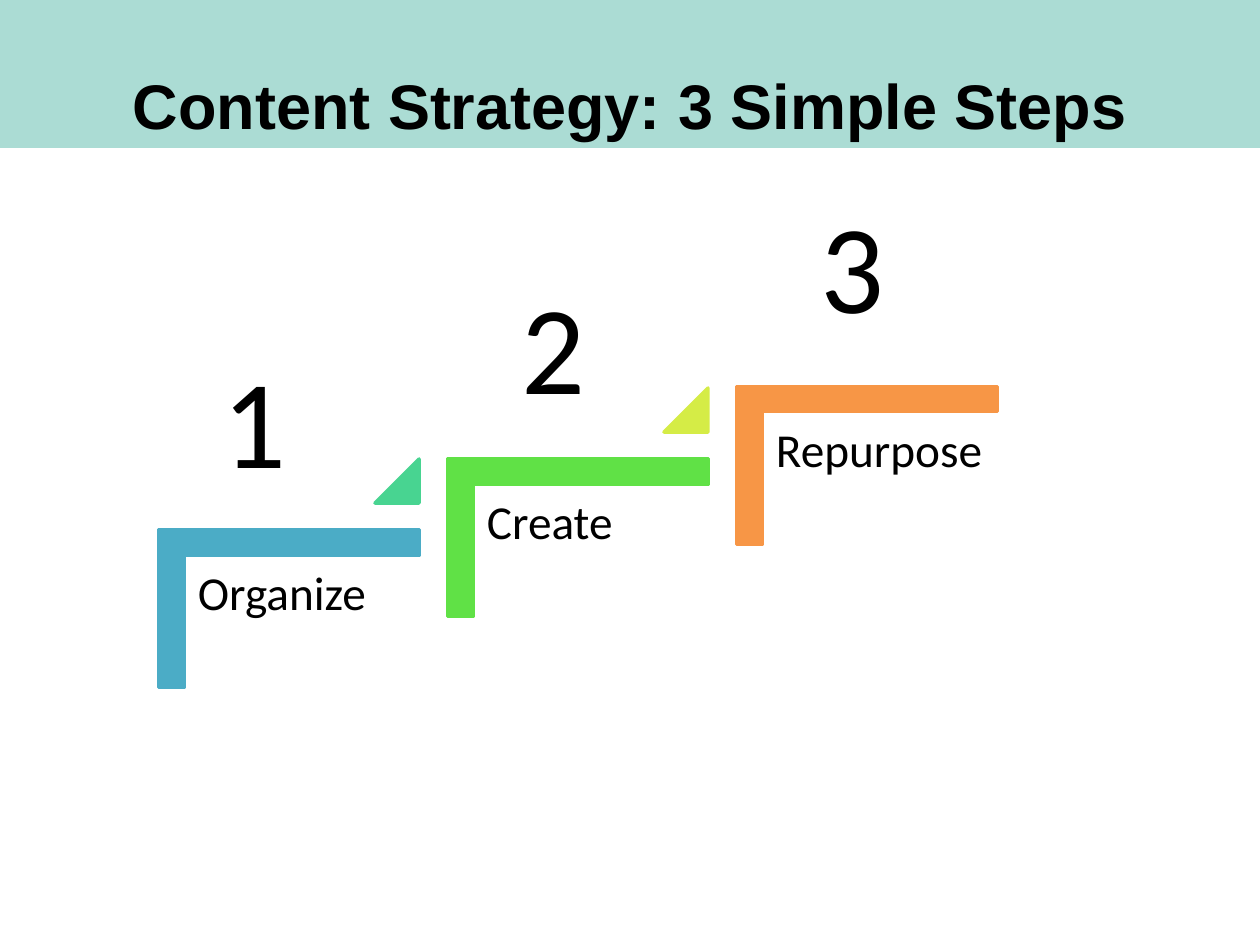
from dataclasses import dataclass

from pptx import Presentation
from pptx import util as u
from pptx.dml.color import RGBColor
from pptx.enum import shapes, text

SCALE = 914400 / 126  # EMU in one px


@dataclass(frozen=True)
class Theme:
    band: str = "ABDCD4"
    ink: str = "000000"
    stairs: tuple = ("4BACC6", "60E146", "F79646")
    marks: tuple = ("48D491", "D5EC46")
    head: str = "Arial"
    body: str = "Calibri"
    title: int = 36
    label: int = 27
    digit: int = 72
    edge: int = 2


THEME = Theme()
STEPS = ("Organize", "Create", "Repurpose")
DIGIT_TOPS = (336, 262, 181)


def px(n):
    return u.Emu(round(n * SCALE))


def add_run(para, words, font, size, bold=False):
    run = para.add_run()
    run.text = words
    run.font.name = font
    run.font.size = u.Pt(size)
    run.font.bold = bold
    run.font.color.rgb = RGBColor.from_string(THEME.ink)


def add_form(parent, kind, box, color, edge=0, adj=(), turn=0):
    form = parent.add_shape(kind, *map(px, box))
    form.shadow.inherit = False
    form.rotation = turn
    tint = RGBColor.from_string(color)
    form.fill.solid()
    form.fill.fore_color.rgb = tint
    if edge:
        form.line.color.rgb = tint
        form.line.width = u.Pt(edge)
    else:
        form.line.fill.background()
    for i, part in enumerate(adj):
        form.adjustments[i] = part
    return form


def add_text(parent, box, words, size, inset=None, space=None):
    frame = parent.add_textbox(*map(px, box)).text_frame
    frame.word_wrap = True
    if inset is not None:
        frame.margin_left = frame.margin_right = px(inset)
        frame.margin_top = frame.margin_bottom = px(inset)
    para = frame.paragraphs[0]
    para.line_spacing = space
    add_run(para, words, THEME.body, size)


def add_title(parent, words):
    band = add_form(parent, shapes.MSO_SHAPE.RECTANGLE,
                    (0, 0, 1260, 148), THEME.band)
    frame = band.text_frame
    frame.word_wrap = True
    frame.vertical_anchor = text.MSO_ANCHOR.BOTTOM
    para = frame.paragraphs[0]
    para.alignment = text.PP_ALIGN.CENTER
    add_run(para, words, THEME.head, THEME.title, bold=True)


def add_step(parent, i, label):
    # Each step sits one tread right of the last and one riser above it
    left, rise = 289 * i, 143 * i // 2
    add_form(parent, shapes.MSO_SHAPE.CORNER,
             (210 + left, 478 - rise, 158, 261), THEME.stairs[i],
             THEME.edge, (0.16, 0.16), 90)
    add_text(parent, (184 + left, 556 - rise, 236, 207), label,
             THEME.label, inset=14, space=0.9)
    if i < len(THEME.marks):
        add_form(parent, shapes.MSO_SHAPE.ISOSCELES_TRIANGLE,
                 (375 + left, 459 - rise, 44, 44), THEME.marks[i],
                 THEME.edge, (1,))


def main():
    deck = Presentation()
    deck.slide_width, deck.slide_height = px(1260), px(945)
    slide = deck.slides.add_slide(deck.slide_layouts[6])

    # Title band
    add_title(slide.shapes, "Content Strategy: 3 Simple Steps")

    # Staircase
    stair = slide.shapes.add_group_shape().shapes
    for i, label in enumerate(STEPS):
        add_step(stair, i, label)

    # Step numbers
    for i, top in enumerate(DIGIT_TOPS):
        add_text(slide.shapes, (210 + 299 * i, top, 105, 165),
                 str(i + 1), THEME.digit)

    deck.save("out.pptx")


if __name__ == "__main__":
    main()
